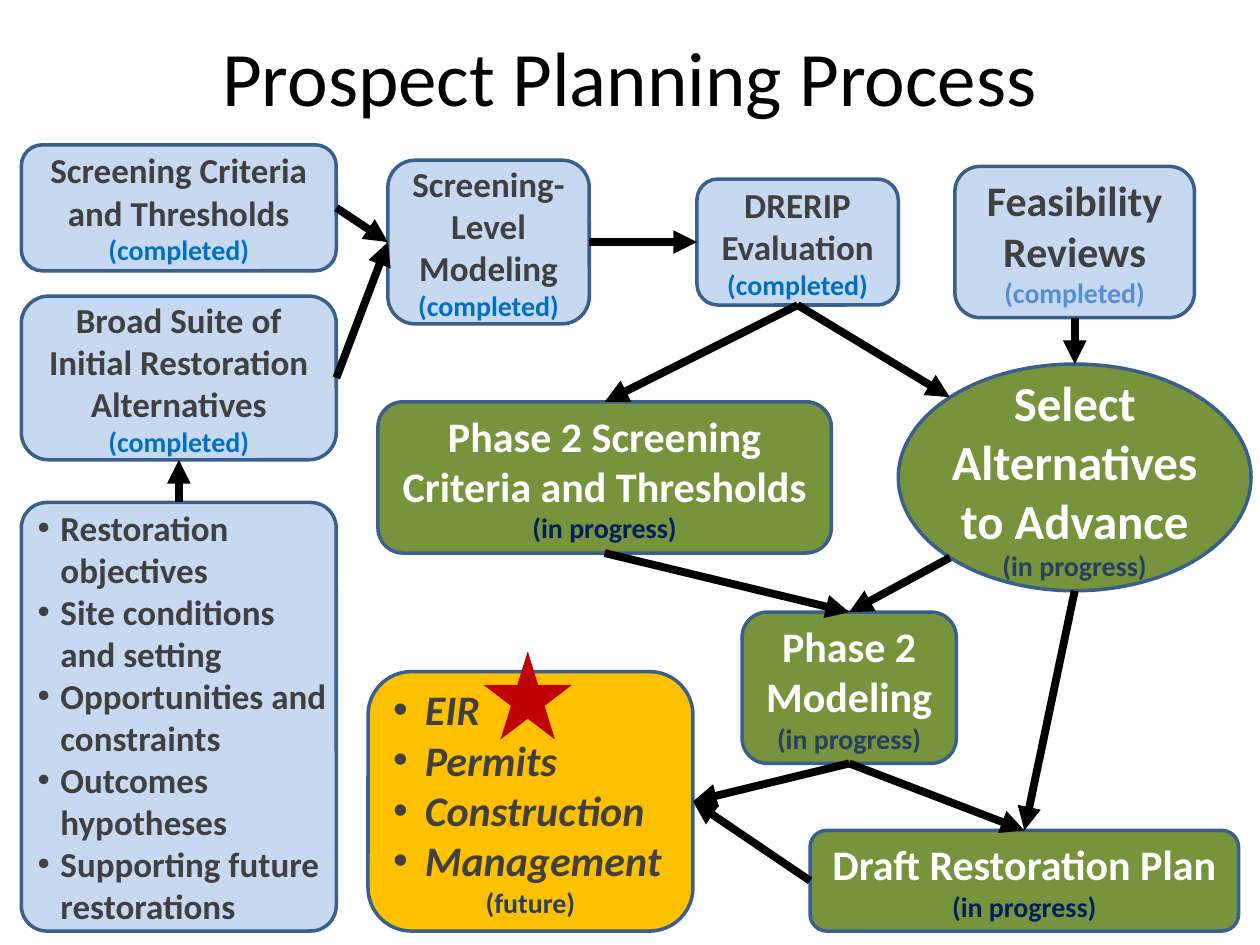
from dataclasses import dataclass

from lxml.etree import SubElement
from pptx import Presentation
from pptx.dml.color import RGBColor
from pptx.enum.shapes import MSO_CONNECTOR, MSO_SHAPE
from pptx.enum.text import MSO_ANCHOR, PP_ALIGN
from pptx.oxml.ns import qn
from pptx.util import Cm, Pt


@dataclass(frozen=True)
class Theme:
    """Colours, type sizes and line widths of the flow chart."""
    font: str = "Calibri"
    black: str = "000000"
    white: str = "FFFFFF"
    grey: str = "404040"
    pale: str = "C6D9F1"
    green: str = "77933C"
    gold: str = "FFC000"
    red: str = "C00000"
    outline: str = "3A5F8C"
    done: str = "0070C0"
    done_light: str = "558ED5"
    ongoing: str = "002060"
    ongoing_soft: str = "254061"
    title: int = 44
    large: int = 28
    medium: int = 24
    normal: int = 20
    status: int = 16
    border: float = 2
    arrow: float = 4.5


@dataclass(frozen=True)
class Box:
    """A rectangle in centimetres."""
    left: float
    top: float
    width: float
    height: float

    def inner(self, left, top, width, height):
        """Return a box offset from this one's top left corner."""
        return Box(self.left + left, self.top + top, width, height)

    def middle(self, left, width, height):
        """Return a box centred on this one's horizontal axis."""
        return self.inner(left, (self.height - height) / 2, width, height)

    def point(self, across, down):
        """Return the point at the given fractions of width and height."""
        return Cm(self.left + across * self.width), Cm(self.top + down * self.height)

    def lengths(self):
        """Return position and size as lengths."""
        return Cm(self.left), Cm(self.top), Cm(self.width), Cm(self.height)


THEME = Theme()
TOP, LEFT, BOTTOM, RIGHT = (0.5, 0), (0, 0.5), (0.5, 1), (1, 0.5)
UPPER_LEFT, LOWER_LEFT = (0.146, 0.146), (0.146, 0.854)


def write(frame, text, size, color, bold=True, italic=False, align=PP_ALIGN.CENTER):
    """Write one paragraph, using the empty first one if there is one."""
    first = frame.paragraphs[0]
    para = frame.add_paragraph() if first.runs else first
    para.alignment = align
    span = para.add_run()
    span.text = text
    font = span.font
    font.name, font.size, font.bold, font.italic = THEME.font, Pt(size), bold, italic
    font.color.rgb = RGBColor.from_string(color)
    return para


def write_bullets(frame, items, size, hanging, italic=False):
    """Write a bulleted list with the given hanging indent."""
    for item in items:
        para = write(frame, item, size, THEME.grey, italic=italic, align=PP_ALIGN.LEFT)
        properties = para._p.get_or_add_pPr()
        properties.set("marL", str(Cm(0.64)))
        properties.set("indent", str(-Cm(hanging)))
        SubElement(properties, qn("a:buFont")).set("typeface", "Arial")
        SubElement(properties, qn("a:buChar")).set("char", "•")


def add_panel(page, box, fill, kind=MSO_SHAPE.ROUNDED_RECTANGLE, outlined=True, inset=None):
    """Add a filled shape ready for text."""
    shape = page.shapes.add_shape(kind, *box.lengths())
    shape.shadow.inherit = False
    shape.fill.solid()
    shape.fill.fore_color.rgb = RGBColor.from_string(fill)
    if outlined:
        shape.line.color.rgb = RGBColor.from_string(THEME.outline)
        shape.line.width = Pt(THEME.border)
    else:
        shape.line.fill.background()
    frame = shape.text_frame
    frame.word_wrap = True
    frame.vertical_anchor = MSO_ANCHOR.MIDDLE
    if inset is not None:
        frame.margin_left = frame.margin_right = Cm(inset)
        frame.margin_top = frame.margin_bottom = Cm(inset)
    return shape


def add_step(page, box, label, status, status_color, size=THEME.normal,
             fill=THEME.pale, color=THEME.grey, **panel):
    """Add one step with its status and return its box."""
    frame = add_panel(page, box, fill, **panel).text_frame
    write(frame, label, size, color)
    write(frame, f"({status})", THEME.status, status_color)
    return box


def add_arrow(page, start, start_side, end, end_side):
    """Join two steps with an arrow."""
    arrow = page.shapes.add_connector(
        MSO_CONNECTOR.STRAIGHT, *start.point(*start_side), *end.point(*end_side))
    arrow.line.color.rgb = RGBColor.from_string(THEME.black)
    arrow.line.width = Pt(THEME.arrow)
    SubElement(arrow.line._get_or_add_ln(), qn("a:tailEnd")).set("type", "triangle")
    SubElement(arrow._element.spPr, qn("a:effectLst"))


def add_title(page, box):
    """Add the slide title."""
    frame = page.shapes.add_textbox(*box.lengths()).text_frame
    frame.word_wrap = True
    frame.vertical_anchor = MSO_ANCHOR.MIDDLE
    write(frame, "Prospect Planning Process", THEME.title, THEME.black, bold=False)


def add_inputs(page, box):
    """Add the left column of inputs and return its linked steps."""
    criteria = add_step(page, box.inner(0, 0, box.width, 2.54),
                        "Screening Criteria and Thresholds", "completed", THEME.done)
    suite = add_step(page, box.inner(0, 3.05, box.width, 3.3),
                     "Broad Suite of Initial Restoration Alternatives", "completed", THEME.done)
    basis = box.inner(0, 7.21, box.width, 8.64)
    panel = add_panel(page, basis, THEME.pale, inset=0)
    panel.adjustments[0] = 0.081
    write_bullets(panel.text_frame, (
        "Restoration objectives", "Site conditions and setting",
        "Opportunities and constraints", "Outcomes hypotheses",
        "Supporting future restorations"), THEME.normal, 0.46)
    add_arrow(page, basis, TOP, suite, BOTTOM)
    return criteria, suite


def add_screening(page, box):
    """Add the row of completed steps and return them."""
    modeling = add_step(page, box.middle(0, 4.06, box.height),
                        "Screening-Level Modeling", "completed", THEME.done)
    evaluation = add_step(page, box.middle(6.23, 4.06, 2.54),
                          "DRERIP Evaluation", "completed", THEME.done)
    reviews = add_step(page, box.middle(11.43, 4.83, 3.05), "Feasibility Reviews",
                       "completed", THEME.done_light, THEME.medium)
    add_arrow(page, modeling, RIGHT, evaluation, LEFT)
    return modeling, evaluation, reviews


def add_phase_two(page, box):
    """Add the steps in progress and return them."""
    look = {"fill": THEME.green, "color": THEME.white}
    screening = add_step(page, box.inner(0, 0.76, 9.14, 3.05),
                         "Phase 2 Screening Criteria and Thresholds",
                         "in progress", THEME.ongoing, THEME.medium, **look)
    select = add_step(page, box.inner(10.49, 0, 7.11, 4.57), "Select Alternatives to Advance",
                      "in progress", THEME.ongoing_soft, THEME.large,
                      kind=MSO_SHAPE.OVAL, inset=0, **look)
    modeling = add_step(page, box.inner(7.34, 5, 4.32, 3.05), "Phase 2 Modeling",
                        "in progress", THEME.ongoing_soft, THEME.medium, **look)
    plan = add_step(page, box.inner(8.71, 9.4, 8.64, 2.03), "Draft Restoration Plan",
                    "in progress", THEME.ongoing, THEME.medium, **look)
    add_arrow(page, screening, BOTTOM, modeling, TOP)
    add_arrow(page, select, LOWER_LEFT, modeling, TOP)
    add_arrow(page, select, BOTTOM, plan, TOP)
    add_arrow(page, modeling, BOTTOM, plan, TOP)
    return screening, select, modeling, plan


def add_future(page, box):
    """Add the starred list of future work."""
    frame = add_panel(page, box, THEME.gold).text_frame
    write_bullets(frame, ("EIR", "Permits", "Construction", "Management"),
                  THEME.medium, 0.64, italic=True)
    write(frame, "(future)", THEME.status, THEME.ongoing_soft)
    add_panel(page, box.inner(2.33, -0.41, 1.78, 1.78), THEME.red,
              MSO_SHAPE.STAR_5_POINT, outlined=False)


def main():
    """Build the planning process slide."""
    deck = Presentation()
    deck.slide_width, deck.slide_height = Cm(25.4), Cm(19.05)
    page = deck.slides.add_slide(deck.slide_layouts[6])
    future = Box(7.42, 13.54, 6.55, 5.23)
    add_title(page, Box(0, 0, 25.4, 3.05))
    criteria, suite = add_inputs(page, Box(0.43, 2.92, 6.35, 15.85))
    modeling, evaluation, reviews = add_screening(page, Box(7.82, 3.23, 16.26, 3.3))
    screening, select, modeling_two, plan = add_phase_two(page, Box(7.62, 7.34, 17.6, 11.43))
    add_future(page, future)
    for step in (criteria, suite):
        add_arrow(page, step, RIGHT, modeling, LEFT)
    add_arrow(page, evaluation, BOTTOM, screening, TOP)
    add_arrow(page, evaluation, BOTTOM, select, UPPER_LEFT)
    add_arrow(page, reviews, BOTTOM, select, TOP)
    add_arrow(page, modeling_two, BOTTOM, future, RIGHT)
    add_arrow(page, plan, LEFT, future, RIGHT)
    deck.save("out.pptx")


if __name__ == "__main__":
    main()
